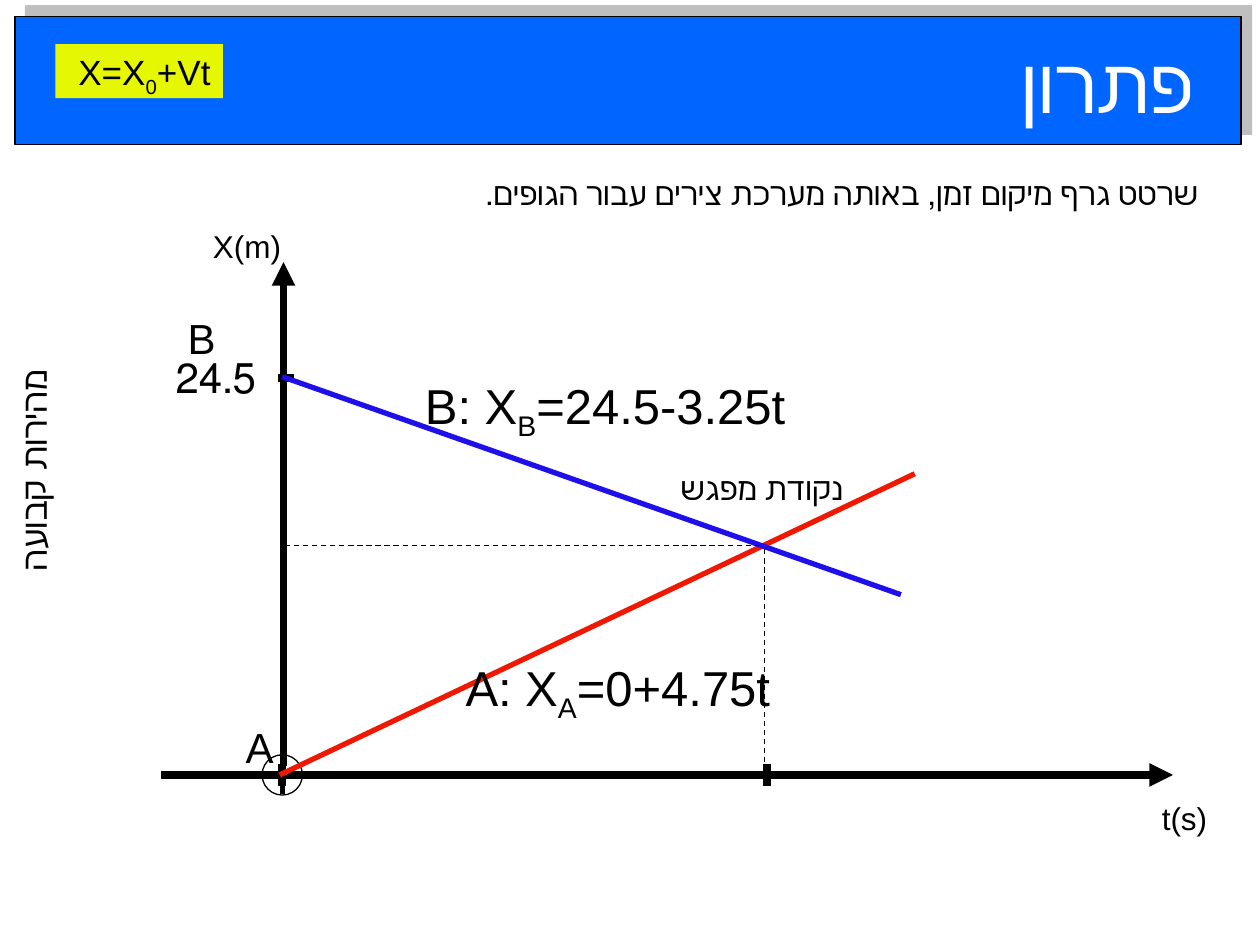
from lxml import etree
from pptx import Presentation, util as u
from pptx.dml.color import RGBColor
from pptx.enum import dml, shapes, text
from pptx.oxml import ns

COLORS = {
    "black": "000000", "white": "FFFFFF", "banner": "0066FF",
    "shade": "808080", "lime": "E6F703", "red": "EF1903", "blue": "1F0FEB",
}


def color(name):
    return RGBColor.from_string(COLORS[name])


def add(parent, tag, **attrs):
    return etree.SubElement(parent, ns.qn(tag), attrs)


class Board:
    font = "Arial"

    def __init__(self, slide):
        self.slide = slide

    def shape(self, kind, box, fill=None, edge=None):
        item = self.slide.shapes.add_shape(kind, *map(u.Inches, box))
        item.shadow.inherit = False
        if fill:
            item.fill.solid()
            item.fill.fore_color.rgb = color(fill)
        else:
            item.fill.background()
        if edge:
            item.line.color.rgb = color(edge)
            item.line.width = u.Pt(0.75)
        else:
            item.line.fill.background()
        return item

    def shade(self, item):
        effects = item._element.spPr.find(ns.qn("a:effectLst"))
        outer = add(effects, "a:outerShdw", dist=str(u.Pt(8.5)),
                    dir=str(315 * 60000), algn="ctr", rotWithShape="0")
        tone = add(outer, "a:srgbClr", val=COLORS["shade"])
        add(tone, "a:alpha", val="50000")

    def letter(self, item, words, size, tint="black", align="RIGHT", rtl=True):
        """Fill a shape with text; every second part of a list is a subscript."""
        frame = item.text_frame
        frame.word_wrap = True
        frame.vertical_anchor = text.MSO_ANCHOR.TOP
        para = frame.paragraphs[0]
        para.alignment = text.PP_ALIGN[align]
        para.font.name = self.font
        para.font.size = u.Pt(size)
        para.font.color.rgb = color(tint)
        if rtl:
            para._p.get_or_add_pPr().set("rtl", "1")
        parts = [words] if isinstance(words, str) else words
        for i, part in enumerate(parts):
            run = para.add_run()
            run.text = part
            if i % 2:
                run._r.get_or_add_rPr().set("baseline", "-25000")

    def label(self, box, words, size, **style):
        item = self.slide.shapes.add_textbox(*map(u.Inches, box))
        self.letter(item, words, size, **style)
        return item

    def line(self, start, end, width, tint="black", dash=False, arrow=False):
        item = self.slide.shapes.add_connector(
            shapes.MSO_CONNECTOR.STRAIGHT, *map(u.Inches, start + end))
        item.line.color.rgb = color(tint)
        item.line.width = u.Pt(width)
        if dash:
            item.line.dash_style = dml.MSO_LINE.DASH
        props = item._element.spPr
        if arrow:
            add(props.find(ns.qn("a:ln")), "a:tailEnd", type="triangle")
        add(props, "a:effectLst")


def main():
    deck = Presentation()
    deck.slide_width, deck.slide_height = u.Inches(10), u.Inches(7.5)
    board = Board(deck.slides.add_slide(deck.slide_layouts[6]))
    rect, oval = shapes.MSO_SHAPE.RECTANGLE, shapes.MSO_SHAPE.OVAL

    # Title banner
    banner = board.shape(rect, (0.12, 0.13, 9.73, 1.02), "banner", "black")
    board.shade(banner)
    board.label((0.55, 0.24, 9.02, 0.83), "פתרון", 44, tint="white", rtl=False)

    # Task and equation of the falling line
    board.label((1.34, 1.33, 8.27, 0.4),
                "שרטט גרף מיקום זמן, באותה מערכת צירים עבור הגופים.", 18)
    board.label((0.94, 2.74, 1.19, 0.5), "24.5", 24)
    board.label((3.12, 2.93, 3.21, 0.57), ["B: X", "B", "=24.5-3.25t"], 28)

    # Time axis with ticks and origin mark
    base = 6.15
    board.line((1.28, base), (9.31, base), 4.5, arrow=True)
    for x in (2.24, 6.09):
        board.line((x, base - 0.09), (x, base + 0.09), 4.5)
    board.line((2.24, 5.99), (2.24, 6.3), 3)
    board.shape(oval, (2.08, 5.99, 0.32, 0.32), edge="black")

    # Position axis with its tick
    board.line((2.25, 6.08), (2.25, 2.08), 4.5, arrow=True)
    board.line((2.21, 3), (2.33, 3), 4.5)

    # Point and axis names
    for box, name, size in (
        ((1.67, 5.68, 0.6, 0.5), "A", 24),
        ((1.21, 2.43, 0.6, 0.5), "B", 24),
        ((1.33, 1.75, 1, 0.4), "X(m)", 18),
        ((8.68, 6.29, 1, 0.4), "t(s)", 18),
    ):
        board.label(box, name, size)

    # Motion graphs and guides to the meeting point
    board.line((2.22, base), (7.26, 3.76), 3, "red")
    board.line((2.24, 2.99), (7.15, 4.72), 3, "blue")
    board.line((6.07, 4.36), (6.07, base), 0.75, dash=True)
    board.line((6.03, 4.33), (2.25, 4.33), 0.75, dash=True)
    board.label((5.01, 3.67, 1.78, 0.4), "נקודת מפגש", 18)

    # Formula tag, side heading and equation of the rising line
    tag = board.shape(rect, (0.44, 0.35, 1.33, 0.43), "lime")
    board.letter(tag, ["X=X", "0", "+Vt"], 20)
    side = board.label((-3.48, 3.52, 7.48, 0.43), "מהירות קבועה", 20,
                       align="CENTER")
    side.rotation = 270
    board.label((3.18, 5.17, 3.03, 0.57), ["A: X", "A", "=0+4.75t"], 28)

    deck.save("out.pptx")


if __name__ == "__main__":
    main()
